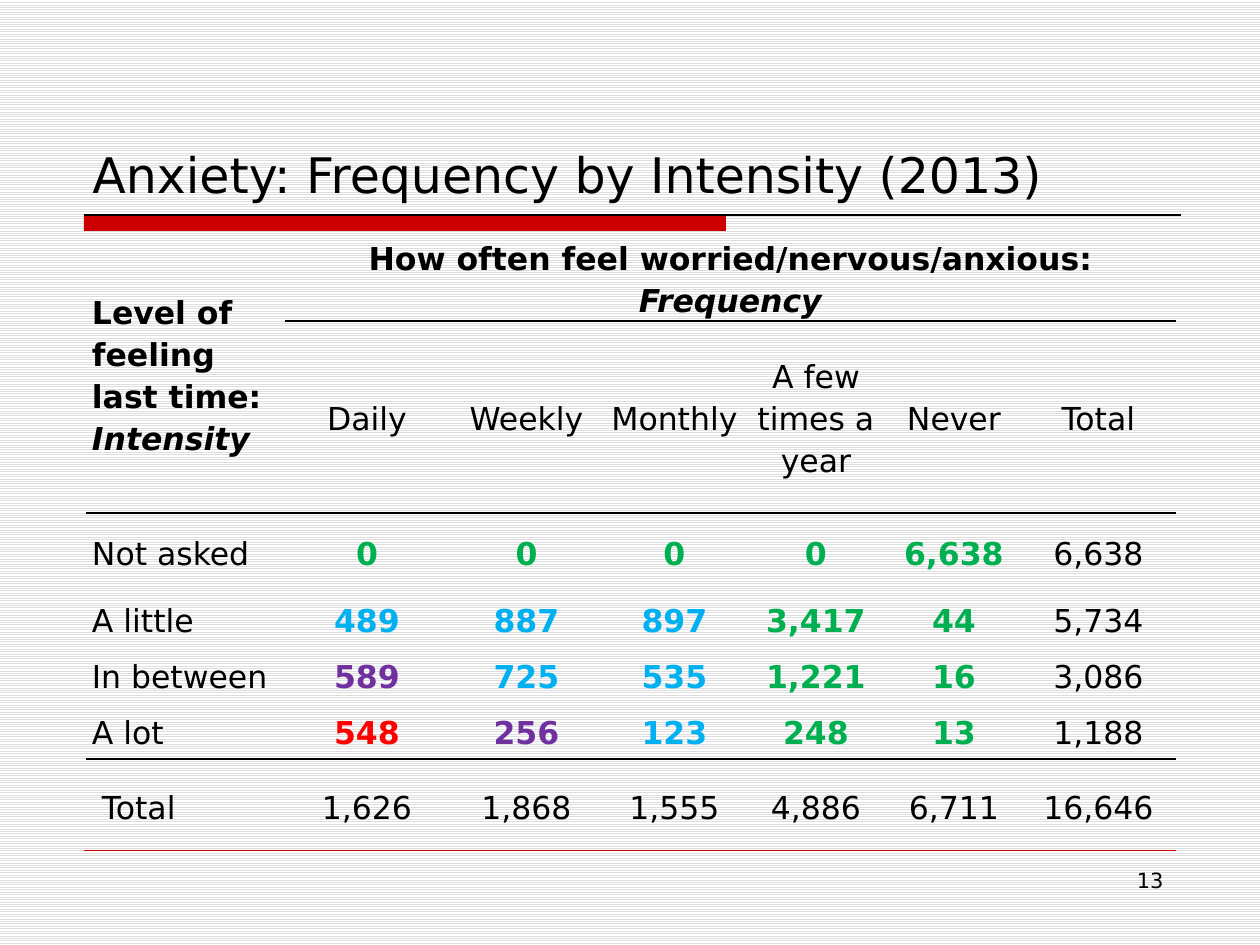
from dataclasses import dataclass

from lxml import etree
from pptx import Presentation
from pptx.dml.color import RGBColor
from pptx.enum.dml import MSO_PATTERN
from pptx.enum.shapes import MSO_CONNECTOR, MSO_SHAPE
from pptx.enum.text import MSO_ANCHOR, PP_ALIGN
from pptx.oxml.ns import qn
from pptx.util import Emu, Pt

STRAIGHT = MSO_CONNECTOR.STRAIGHT
RECTANGLE = MSO_SHAPE.RECTANGLE
LIGHT_HORIZONTAL = MSO_PATTERN.LIGHT_HORIZONTAL
TOP, MIDDLE, BOTTOM = MSO_ANCHOR.TOP, MSO_ANCHOR.MIDDLE, MSO_ANCHOR.BOTTOM
LEFT, CENTER, RIGHT = PP_ALIGN.LEFT, PP_ALIGN.CENTER, PP_ALIGN.RIGHT
EMU_PER_PX = 914400 / 126
PLAIN_TABLE_STYLE = "{2D5ABB26-0587-4C30-8999-92F81FD0307C}"


@dataclass(frozen=True)
class Theme:
    font: str = "DejaVu Sans"
    ink: str = "000000"
    accent: str = "CC0000"
    stripe: str = "DDDDDD"
    paper: str = "FFFFFF"
    none: str = "00B050"
    mild: str = "00B0F0"
    moderate: str = "7030A0"
    severe: str = "FF0000"
    title_size: int = 28
    table_size: int = 18
    number_size: int = 12


THEME = Theme()
COLUMN_WIDTHS = [199, 164, 155, 141, 142, 134, 155]
ROW_HEIGHTS = [87, 192, 78, 56, 56, 56, 94]
FREQUENCIES = ["Daily", "Weekly", "Monthly", "A few times a year", "Never", "Total"]
N, L, M, S, T = THEME.none, THEME.mild, THEME.moderate, THEME.severe, THEME.ink
INTENSITIES = [
    ("Not asked", ["0", "0", "0", "0", "6,638", "6,638"], [N, N, N, N, N, T]),
    ("A little", ["489", "887", "897", "3,417", "44", "5,734"], [L, L, L, N, N, T]),
    ("In between", ["589", "725", "535", "1,221", "16", "3,086"], [M, L, L, N, N, T]),
    ("A lot", ["548", "256", "123", "248", "13", "1,188"], [S, M, L, N, N, T]),
    (" Total", ["1,626", "1,868", "1,555", "4,886", "6,711", "16,646"], [T] * 6),
]


def px(length):
    return Emu(round(length * EMU_PER_PX))


def rgb(color):
    return RGBColor.from_string(color)


def apply(target, values):
    for name, value in values.items():
        setattr(target, name, value)


def write_runs(paragraph, runs, size, align, color=THEME.ink):
    paragraph.alignment = align
    for text, style in runs:
        run = paragraph.add_run()
        run.text = text
        apply(run.font, {"name": THEME.font, "size": Pt(size), **style})
        run.font.color.rgb = rgb(color)


def add_label(slide, box, text, size, align, anchor):
    frame = slide.shapes.add_textbox(*map(px, box)).text_frame
    apply(frame, {"word_wrap": True, "vertical_anchor": anchor})
    write_runs(frame.paragraphs[0], [(text, {})], size, align)


def add_rule(slide, left, right, y, color, width):
    rule = slide.shapes.add_connector(STRAIGHT, px(left), px(y), px(right), px(y))
    rule.line.color.rgb = rgb(color)
    rule.line.width = Pt(width)
    etree.SubElement(rule._element.spPr, qn("a:effectLst"))


def add_bar(slide, box, color):
    bar = slide.shapes.add_shape(RECTANGLE, *map(px, box))
    bar.shadow.inherit = False
    bar.fill.solid()
    bar.fill.fore_color.rgb = rgb(color)
    bar.line.fill.background()


def underline(cell):
    border = etree.Element(qn("a:lnB"), w=str(Pt(1)))
    fill = etree.SubElement(border, qn("a:solidFill"))
    etree.SubElement(fill, qn("a:srgbClr"), val=THEME.ink)
    cell._tc.get_or_add_tcPr().insert(0, border)


def write_cell(cell, runs, align=CENTER, color=THEME.ink):
    paragraph = cell.text_frame.paragraphs[0]
    paragraph.line_spacing = 1.15
    write_runs(paragraph, runs, THEME.table_size, align, color)


def add_crosstab(slide, left, top):
    frame = slide.shapes.add_table(
        len(ROW_HEIGHTS), len(COLUMN_WIDTHS),
        px(left), px(top), px(sum(COLUMN_WIDTHS)), px(sum(ROW_HEIGHTS)),
    )
    table = frame.table
    apply(table, {"first_row": False, "horz_banding": False})
    table._tbl.tblPr.find(qn("a:tableStyleId")).text = PLAIN_TABLE_STYLE
    for column, width in zip(table.columns, COLUMN_WIDTHS):
        column.width = px(width)
    for row, height in zip(table.rows, ROW_HEIGHTS):
        row.height = px(height)
    for cell in table.iter_cells():
        cell.fill.background()
        apply(cell, {
            "margin_left": px(6), "margin_right": px(6),
            "margin_top": 0, "margin_bottom": 0, "vertical_anchor": MIDDLE,
        })

    table.cell(0, 0).merge(table.cell(1, 0))
    table.cell(0, 1).merge(table.cell(0, len(FREQUENCIES)))
    bold, emphasis = {"bold": True}, {"bold": True, "italic": True}
    write_cell(table.cell(0, 0), [("Level of feeling last time: ", bold),
                                  ("Intensity", emphasis)], LEFT)
    write_cell(table.cell(0, 1), [("How often feel worried/nervous/anxious: ", bold),
                                  ("Frequency", emphasis)])
    for column, frequency in enumerate(FREQUENCIES, 1):
        write_cell(table.cell(1, column), [(frequency, {})])
    for row, (intensity, counts, colors) in enumerate(INTENSITIES, 2):
        write_cell(table.cell(row, 0), [(intensity, {})], LEFT)
        for column, (count, color) in enumerate(zip(counts, colors), 1):
            style = {"bold": color != THEME.ink}
            write_cell(table.cell(row, column), [(count, style)], CENTER, color)
    for row in (0, 1, 5):
        for column in range(len(COLUMN_WIDTHS)):
            underline(table.cell(row, column))


def main():
    deck = Presentation()
    apply(deck, {"slide_width": px(1260), "slide_height": px(945)})
    slide = deck.slides.add_slide(deck.slide_layouts[6])
    backdrop = slide.background.fill
    backdrop.patterned()
    backdrop.pattern = LIGHT_HORIZONTAL
    backdrop.fore_color.rgb = rgb(THEME.stripe)
    backdrop.back_color.rgb = rgb(THEME.paper)

    add_bar(slide, (84, 215, 642, 16), THEME.accent)
    add_rule(slide, 84, 1181, 215, THEME.ink, 0.75)
    add_rule(slide, 84, 1176, 850, THEME.accent, 0.25)
    add_label(slide, (80, 42, 1102, 167), "Anxiety: Frequency by Intensity (2013)",
              THEME.title_size, LEFT, BOTTOM)
    add_label(slide, (903, 861, 273, 66), "13", THEME.number_size, RIGHT, TOP)
    add_crosstab(slide, 86, 234)
    deck.save("out.pptx")


if __name__ == "__main__":
    main()
